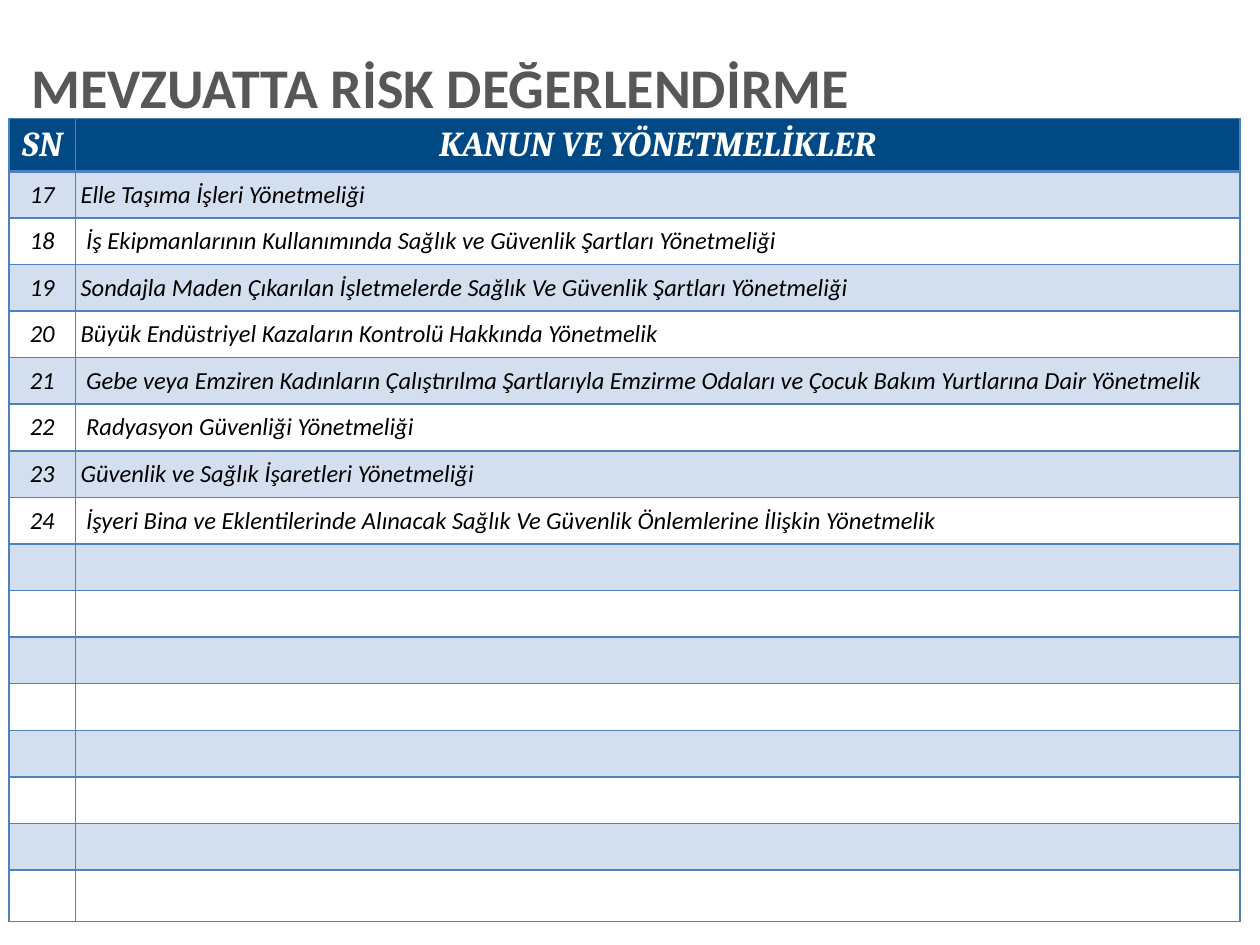
from lxml import etree
from pptx import Presentation
from pptx.dml.color import RGBColor
from pptx.enum.text import MSO_ANCHOR, PP_ALIGN
from pptx.oxml.ns import qn
from pptx.util import Inches, Pt

MIDDLE = MSO_ANCHOR.MIDDLE
LEFT, CENTER = PP_ALIGN.LEFT, PP_ALIGN.CENTER

GRAY = RGBColor(0x57, 0x57, 0x57)
NAVY = RGBColor(0x00, 0x49, 0x85)
BAND = RGBColor(0xD3, 0xDF, 0xEE)
LINE = RGBColor(0x4F, 0x81, 0xBD)
WHITE = RGBColor(0xFF, 0xFF, 0xFF)
BLACK = RGBColor(0x00, 0x00, 0x00)

FIRST = 17
ROWS = 17
WIDTHS = (0.53, 9.24)
PADS = (0.07, 0.04)
HEAD_H, ROW_H, LAST_H = 0.42, 0.37, 0.41
LAWS = [
    "Elle Taşıma İşleri Yönetmeliği",
    " İş Ekipmanlarının Kullanımında Sağlık ve Güvenlik Şartları Yönetmeliği",
    "Sondajla Maden Çıkarılan İşletmelerde Sağlık Ve Güvenlik Şartları Yönetmeliği",
    "Büyük Endüstriyel Kazaların Kontrolü Hakkında Yönetmelik",
    " Gebe veya Emziren Kadınların Çalıştırılma Şartlarıyla Emzirme Odaları"
    " ve Çocuk Bakım Yurtlarına Dair Yönetmelik",
    " Radyasyon Güvenliği Yönetmeliği",
    "Güvenlik ve Sağlık İşaretleri Yönetmeliği",
    " İşyeri Bina ve Eklentilerinde Alınacak Sağlık Ve Güvenlik Önlemlerine"
    " İlişkin Yönetmelik",
]


def add_run(para, text, size, font, color, bold=False, italic=False):
    run = para.add_run()
    run.text = text
    run.font.size = Pt(size)
    run.font.name = font
    run.font.color.rgb = color
    run.font.bold = bold
    run.font.italic = italic


def add_title(slide):
    box = slide.shapes.add_textbox(
        Inches(0.25), Inches(0.36), Inches(9.64), Inches(0.71))
    frame = box.text_frame
    frame.word_wrap = True
    frame.vertical_anchor = MIDDLE
    frame.margin_left = frame.margin_right = 0
    para = frame.paragraphs[0]
    para.line_spacing = 0.9
    add_run(para, "MEVZUATTA RİSK DEĞERLENDİRME", 32, "Calibri", GRAY, bold=True)


def set_edges(cell, row):
    """Draw all four borders, with a thick rule below the header row."""
    props = cell._tc.get_or_add_tcPr()
    thick = {0: "lnB", 1: "lnT"}.get(row)
    for side in ("lnL", "lnR", "lnT", "lnB"):
        width = Pt(2.25 if side == thick else 1)
        edge = etree.SubElement(props, qn("a:" + side), w=str(width))
        fill = etree.SubElement(edge, qn("a:solidFill"))
        etree.SubElement(fill, qn("a:srgbClr"), val=str(LINE))


def style_cell(cell, row, pad):
    cell.vertical_anchor = MIDDLE
    cell.margin_left = cell.margin_right = Inches(pad)
    cell.margin_top = cell.margin_bottom = 0
    set_edges(cell, row)
    if row and row % 2 == 0:
        cell.fill.background()
    else:
        cell.fill.solid()
        cell.fill.fore_color.rgb = BAND if row else NAVY


def fill_cell(cell, text, row, align):
    para = cell.text_frame.paragraphs[0]
    para.alignment = align
    if row:
        add_run(para, text, 14, "Calibri", BLACK, italic=True)
    else:
        add_run(para, text, 20, "Cambria", WHITE, bold=True, italic=True)


def add_laws(slide):
    heights = [HEAD_H] + [ROW_H] * (ROWS - 2) + [LAST_H]
    table = slide.shapes.add_table(
        ROWS, len(WIDTHS), Inches(0.07), Inches(0.94),
        Inches(sum(WIDTHS)), Inches(sum(heights))).table
    table.first_row = table.horz_banding = False
    for col, width in zip(table.columns, WIDTHS):
        col.width = Inches(width)
    for line, height in zip(table.rows, heights):
        line.height = Inches(height)

    texts = [("SN", "KANUN VE YÖNETMELİKLER")]
    texts += [(str(num), law) for num, law in enumerate(LAWS, FIRST)]
    for row in range(ROWS):
        for col, pad in enumerate(PADS):
            cell = table.cell(row, col)
            style_cell(cell, row, pad)
            if row < len(texts):
                align = LEFT if row and col else CENTER
                fill_cell(cell, texts[row][col], row, align)


def main():
    deck = Presentation()
    deck.slide_width, deck.slide_height = Inches(10), Inches(7.5)
    slide = deck.slides.add_slide(deck.slide_layouts[6])
    add_laws(slide)
    add_title(slide)
    deck.save("out.pptx")


if __name__ == "__main__":
    main()
